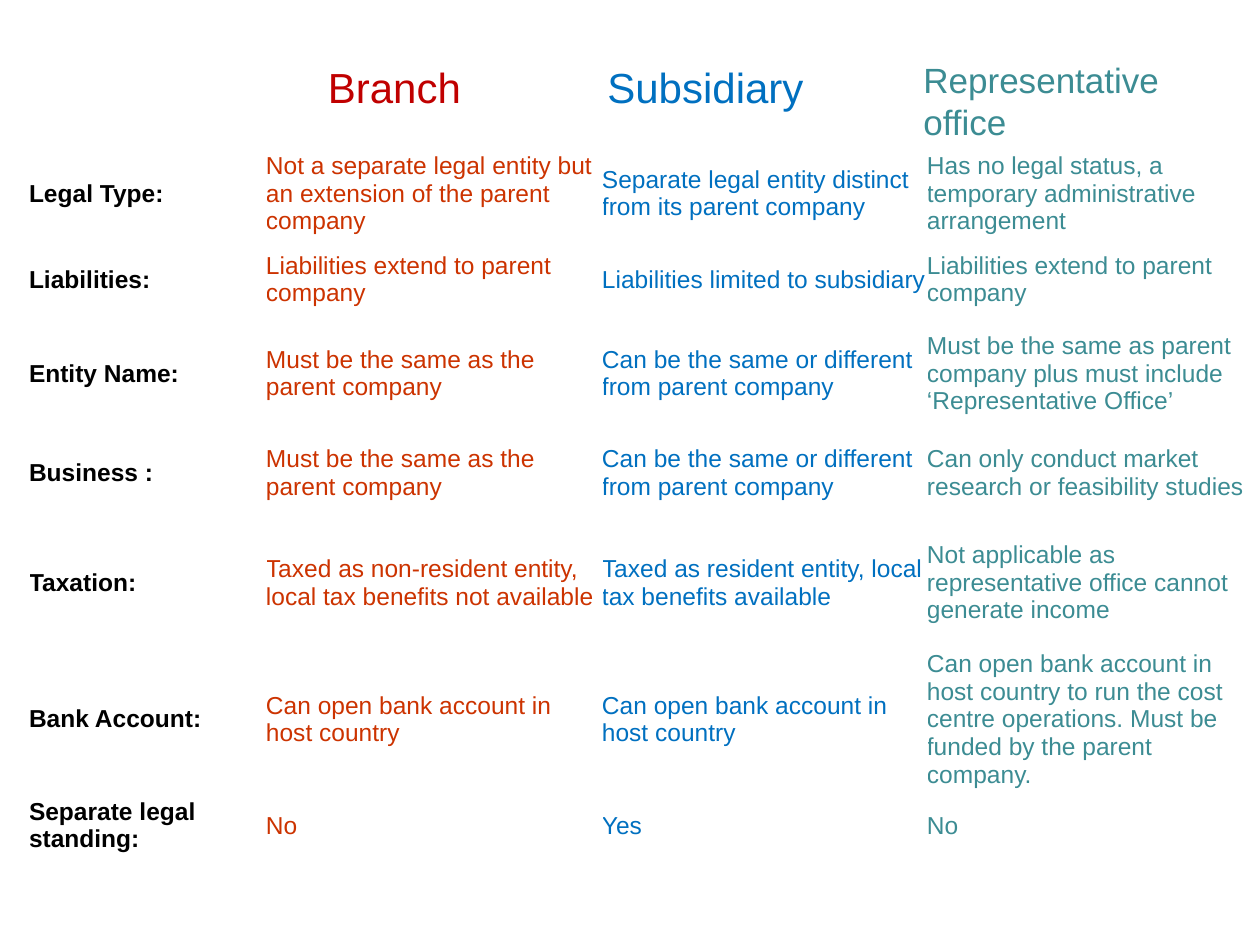
from pptx import Presentation
from pptx.dml.color import RGBColor
from pptx.enum.text import MSO_ANCHOR, PP_ALIGN
from pptx.util import Emu, Pt

PX = 914400 // 126
BLACK = RGBColor(0x00, 0x00, 0x00)
RED = RGBColor(0xC0, 0x00, 0x00)
RUST = RGBColor(0xCC, 0x33, 0x00)
BLUE = RGBColor(0x00, 0x70, 0xC0)
TEAL = RGBColor(0x3C, 0x8C, 0x93)

# Heading, box in px, size, colour, alignment
HEADS = [
    ("Branch", (242, 55, 305, 86), 24, RED, PP_ALIGN.CENTER),
    ("Subsidiary", (595, 55, 273, 63), 24, BLUE, PP_ALIGN.LEFT),
    ("Representative office", (911, 52, 346, 97), 20, TEAL, PP_ALIGN.LEFT),
]

# Row height in px, then label, branch, subsidiary, representative office
ROWS = [
    (89, "Legal Type:",
     "Not a separate legal entity but an extension of the parent company",
     "Separate legal entity distinct from its parent company",
     "Has no legal status, a temporary administrative arrangement"),
    (83, "Liabilities:",
     "Liabilities extend to parent company",
     "Liabilities limited to subsidiary",
     "Liabilities extend to parent company"),
    (105, "Entity Name:",
     "Must be the same as the parent company",
     "Can be the same or different from parent company",
     "Must be the same as parent company plus must include ‘Representative Office’"),
    (94, "Business :",
     "Must be the same as the parent company",
     "Can be the same or different from parent company",
     "Can only conduct market research or feasibility studies"),
    (126, "Taxation:",
     "Taxed as non-resident entity, local tax benefits not available",
     "Taxed as resident entity, local tax benefits available",
     "Not applicable as representative office cannot generate income"),
    (134, "Bank Account:",
     "Can open bank account in host country",
     "Can open bank account in host country",
     "Can open bank account in host country to run the cost centre operations. "
     "Must be funded by the parent company."),
    (65, "Separate legal standing:", "No", "Yes", "No"),
]
COLS = [(237, BLACK), (336, RUST), (325, BLUE), (333, TEAL)]
LEFT, TOP = 29, 149


def px(n):
    return Emu(n * PX)


def write(frame, text, size=14, color=BLACK, bold=False, align=PP_ALIGN.LEFT):
    frame.word_wrap = True
    para = frame.paragraphs[0]
    para.alignment = align
    run = para.add_run()
    run.text = text
    run.font.name = "Arial"
    run.font.size = Pt(size)
    run.font.bold = bold
    run.font.color.rgb = color


prs = Presentation()
prs.slide_width, prs.slide_height = px(1260), px(945)
slide = prs.slides.add_slide(prs.slide_layouts[6])

# Column headings
for text, box, size, color, align in HEADS:
    head = slide.shapes.add_textbox(*map(px, box))
    write(head.text_frame, text, size=size, color=color, align=align)

# Comparison table
wide = sum(width for width, _ in COLS)
high = sum(row[0] for row in ROWS)
table = slide.shapes.add_table(
    len(ROWS), len(COLS), px(LEFT), px(TOP), px(wide), px(high)).table
table.first_row = table.horz_banding = False
for col, (width, _) in zip(table.columns, COLS):
    col.width = px(width)
for r, (height, *texts) in enumerate(ROWS):
    table.rows[r].height = px(height)
    for c, text in enumerate(texts):
        cell = table.cell(r, c)
        cell.fill.background()
        cell.vertical_anchor = MSO_ANCHOR.MIDDLE
        cell.margin_left = cell.margin_right = 0
        cell.margin_top = cell.margin_bottom = 0
        write(cell.text_frame, text, color=COLS[c][1], bold=c == 0)

prs.save("out.pptx")
